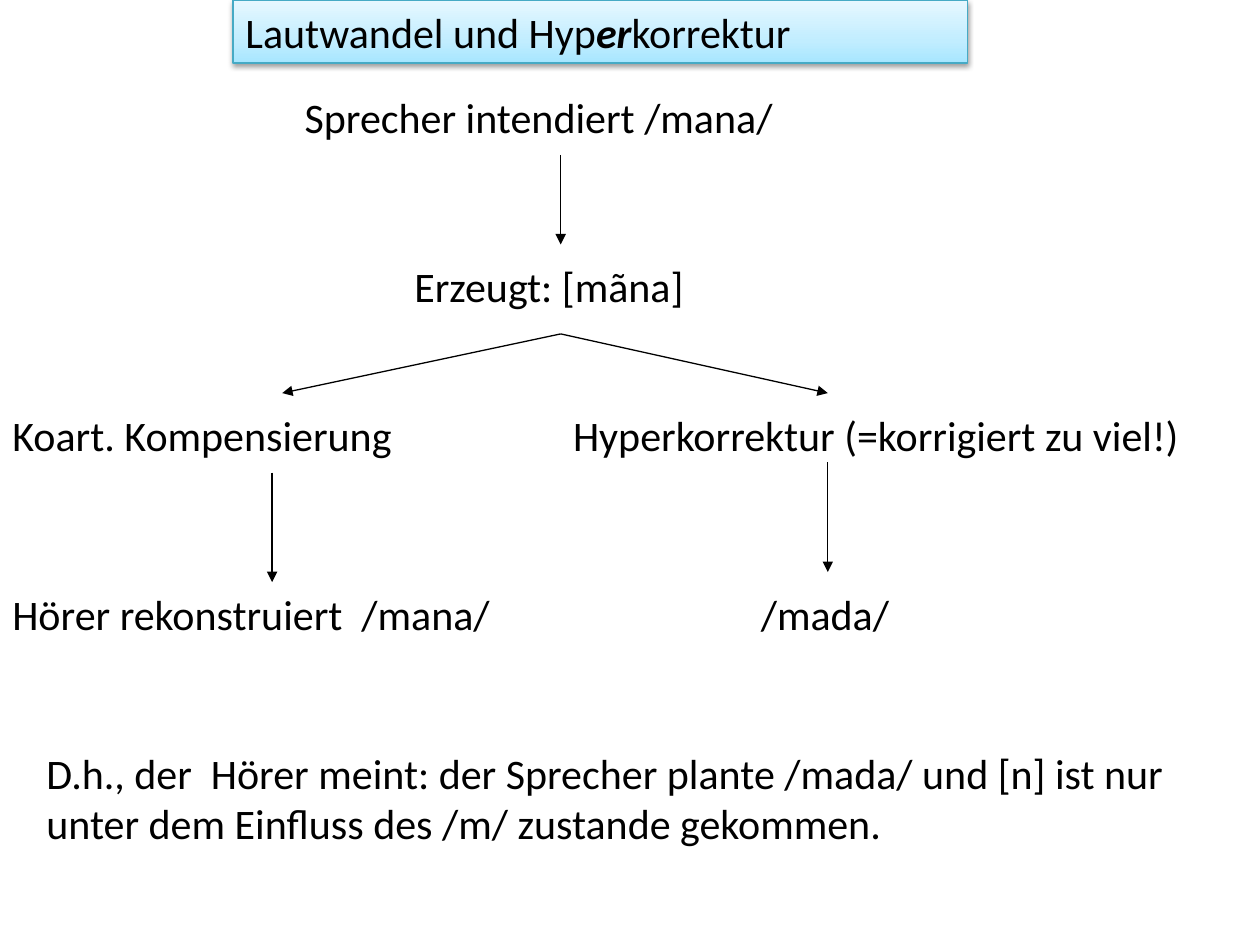
from copy import deepcopy
from dataclasses import dataclass

from lxml.etree import SubElement
from pptx import Presentation
from pptx.dml.color import RGBColor
from pptx.enum.shapes import MSO_CONNECTOR as Connector, MSO_SHAPE as Shape
from pptx.enum.text import MSO_ANCHOR as Anchor, MSO_AUTO_SIZE as AutoSize, PP_ALIGN as Align
from pptx.oxml import parse_xml
from pptx.oxml.ns import nsdecls, qn
from pptx.util import Inches, Pt


@dataclass(frozen=True)
class Theme:
    font: str = "Calibri"
    size: float = 24
    ink: str = "000000"
    border: str = "46AAC5"
    stroke: float = 0.75
    gradient: tuple = ((0, "A7E6FF"), (0.35, "C1EDFF"), (1, "E7F8FF"))


class Diagram:
    COLUMNS, ROWS = 100, 75

    def __init__(self, deck, theme):
        self.theme = theme
        self.page = deck.slides.add_slide(deck.slide_layouts[6])
        self.column = deck.slide_width / self.COLUMNS
        self.row = deck.slide_height / self.ROWS

    def place(self, *lengths):
        steps = (self.column, self.row) * 2
        return [round(length * step) for length, step in zip(lengths, steps)]

    def set_text(self, box, spans, wrap):
        frame = box.text_frame
        frame.word_wrap = wrap
        frame.auto_size = AutoSize.SHAPE_TO_FIT_TEXT
        frame.vertical_anchor = Anchor.TOP
        para = frame.paragraphs[0]
        para.alignment = Align.LEFT
        for words, stressed in spans:
            span = para.add_run()
            span.text = words
            font = span.font
            font.name, font.size = self.theme.font, Pt(self.theme.size)
            font.bold = font.italic = stressed
            font.color.rgb = RGBColor.from_string(self.theme.ink)

    def label(self, words, left, top, width, height=5, wrap=False):
        box = self.page.shapes.add_textbox(*self.place(left, top, width, height))
        self.set_text(box, [(words, False)], wrap)

    def banner(self, spans, left, top, width, height):
        box = self.page.shapes.add_shape(Shape.RECTANGLE, *self.place(left, top, width, height))
        box.fill.gradient()
        stop_list = next(box.element.spPr.iter(qn("a:gsLst")))
        stop_list.append(deepcopy(stop_list[0]))
        for stop, (position, color) in zip(box.fill.gradient_stops, self.theme.gradient):
            stop.position = position
            stop.color.rgb = RGBColor.from_string(color)
        box.fill.gradient_angle = 90
        box.line.color.rgb = RGBColor.from_string(self.theme.border)
        box.line.width = Pt(self.theme.stroke)
        box.element.spPr.append(parse_xml(
            f'<a:effectLst {nsdecls("a")}><a:outerShdw blurRad="{Pt(3.1)}" dist="{Pt(1.6)}" '
            f'dir="5400000" rotWithShape="0"><a:srgbClr val="{self.theme.ink}">'
            '<a:alpha val="38000"/></a:srgbClr></a:outerShdw></a:effectLst>'))
        self.set_text(box, spans, True)

    def arrow(self, start, end):
        line = self.page.shapes.add_connector(Connector.STRAIGHT, *self.place(*start, *end))
        line.line.color.rgb = RGBColor.from_string(self.theme.ink)
        line.line.width = Pt(self.theme.stroke)
        properties = line.element.spPr
        SubElement(properties.find(qn("a:ln")), qn("a:tailEnd"), type="triangle")
        SubElement(properties, qn("a:effectLst"))


def main():
    deck = Presentation()
    deck.slide_width, deck.slide_height = Inches(10), Inches(7.5)
    diagram = Diagram(deck, Theme())

    diagram.banner([("Lautwandel und Hyp", False), ("er", True), ("korrektur", False)],
                   18.5, 0, 58.3, 5)

    branch_row, result_row = 32, 46.2
    for words, left, top, width in (
        ("Sprecher intendiert /mana/", 23.2, 6.8, 39.7),
        ("Erzeugt: [mãna]", 31.9, 20.2, 23.7),
        ("Koart. Kompensierung", 0, branch_row, 32.5),
        ("Hyperkorrektur (=korrigiert zu viel!)", 44.5, branch_row, 50.9),
        ("Hörer rekonstruiert  /mana/", 0, result_row, 40.6),
        ("/mada/", 59.4, result_row, 12.4),
    ):
        diagram.label(words, left, top, width)
    diagram.label("D.h., der  Hörer meint: der Sprecher plante /mada/ und [n] ist nur "
                  "unter dem Einfluss des /m/ zustande gekommen.",
                  2.7, 58.8, 97.3, 9.1, wrap=True)

    trunk, right = 44.5, 65.7
    fork = (trunk, 26.5)
    for start, end in (
        ((trunk, 12.3), (trunk, 19.4)),
        (fork, (22.4, 31.2)),
        (fork, (right, 31.2)),
        ((21.6, 37.5), (21.6, 46.2)),
        ((right, 36.7), (right, 45.4)),
    ):
        diagram.arrow(start, end)

    deck.save("out.pptx")


if __name__ == "__main__":
    main()
